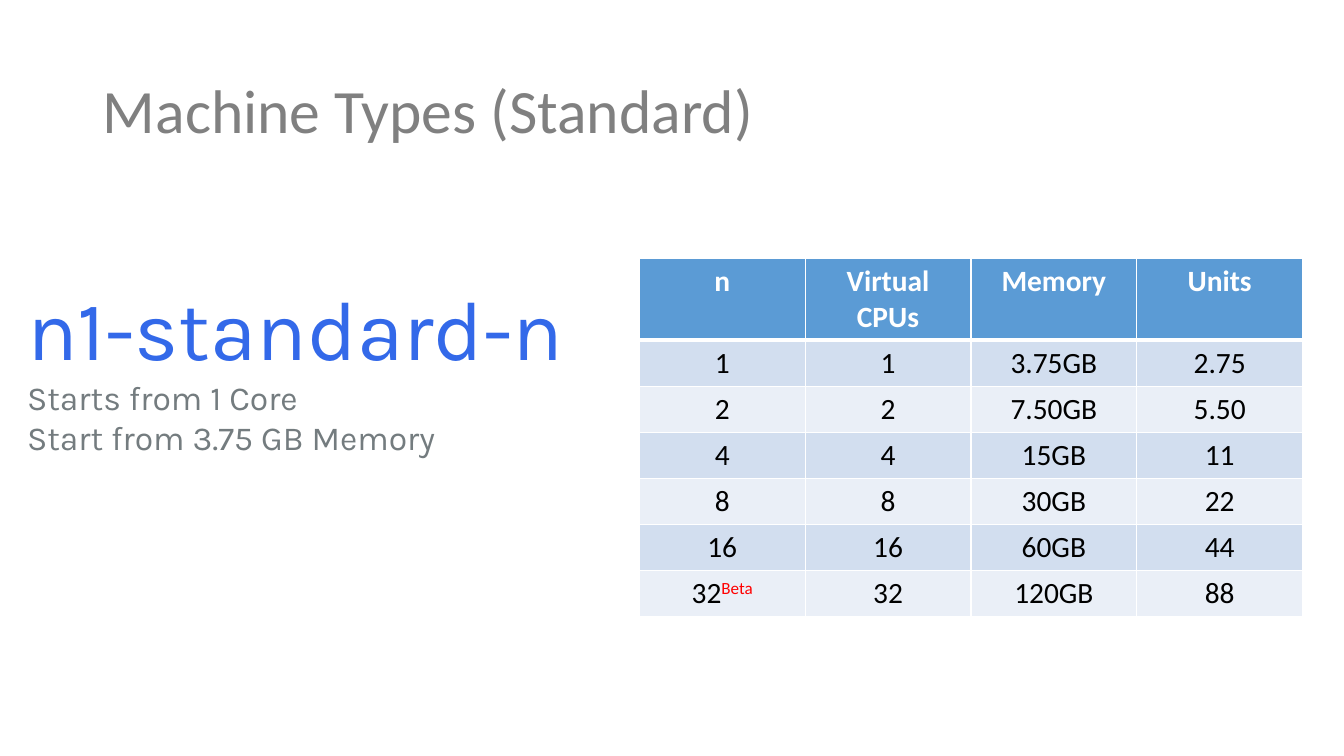
from lxml.etree import SubElement
from pptx import Presentation
from pptx.dml.color import RGBColor
from pptx.enum.text import MSO_ANCHOR, PP_ALIGN
from pptx.oxml.ns import qn
from pptx.util import Inches, Pt

COLORS = {
    "white": "FFFFFF", "black": "000000", "title": "808080", "head": "5B9BD5",
    "odd": "D2DEEF", "even": "EAEFF7", "beta": "FF0000",
    "blue": "3369E9", "gray": "747C7F",
}
ROWS = [
    ["n", "Virtual CPUs", "Memory", "Units"],
    ["1", "1", "3.75GB", "2.75"],
    ["2", "2", "7.50GB", "5.50"],
    ["4", "4", "15GB", "11"],
    ["8", "8", "30GB", "22"],
    ["16", "16", "60GB", "44"],
    ["32", "32", "120GB", "88"],
]


def add_run(para, text, size, font, color, bold=False):
    run = para.add_run()
    run.text = text
    run.font.size = Pt(size)
    run.font.name = font
    run.font.bold = bold
    run.font.color.rgb = RGBColor.from_string(COLORS[color])
    return run


def add_edges(cell, base):
    """Draw white cell borders, with the bottom one base points wide."""
    props = cell._tc.get_or_add_tcPr()
    for side, width in (("L", 1), ("R", 1), ("T", 1), ("B", base)):
        line = SubElement(props, qn(f"a:ln{side}"), w=str(Pt(width)))
        fill = SubElement(line, qn("a:solidFill"))
        SubElement(fill, qn("a:srgbClr"), val=COLORS["white"])


deck = Presentation()
deck.slide_width, deck.slide_height = Inches(13.33), Inches(7.5)
slide = deck.slides.add_slide(deck.slide_layouts[5])

# Title
title = slide.shapes.title
title.left, title.top = Inches(0.92), Inches(0.4)
title.width, title.height = Inches(11.5), Inches(1.45)
title.text_frame.vertical_anchor = MSO_ANCHOR.MIDDLE
para = title.text_frame.paragraphs[0]
para.alignment = PP_ALIGN.LEFT
para.line_spacing = 0.9
add_run(para, "Machine Types (Standard)", 44, "Calibri", "title")

# Machine sizes
table = slide.shapes.add_table(
    len(ROWS), len(ROWS[0]), Inches(6.34), Inches(2.56), Inches(6.58), Inches(2.8)
).table
for r, row in enumerate(ROWS):
    head = r == 0
    shade = "head" if head else "odd" if r % 2 else "even"
    for c, text in enumerate(row):
        cell = table.cell(r, c)
        add_edges(cell, 3 if head else 1)
        cell.fill.solid()
        cell.fill.fore_color.rgb = RGBColor.from_string(COLORS[shade])
        para = cell.text_frame.paragraphs[0]
        para.alignment = PP_ALIGN.CENTER
        add_run(para, text, 21, "Calibri", "white" if head else "black", head)
beta = add_run(table.cell(6, 0).text_frame.paragraphs[0], "Beta", 21, "Calibri", "beta")
beta.font._element.set("baseline", "30000")

# Machine name and starting point
frame = slide.shapes.add_textbox(
    Inches(0.17), Inches(2.69), Inches(6.66), Inches(1.92)
).text_frame
frame.word_wrap = True
add_run(frame.paragraphs[0], "n1-standard-n", 60, "Karla", "blue")
for text in ("Starts from 1 Core", "Start from 3.75 GB Memory"):
    add_run(frame.add_paragraph(), text, 24, "Karla", "gray")

deck.save("out.pptx")
